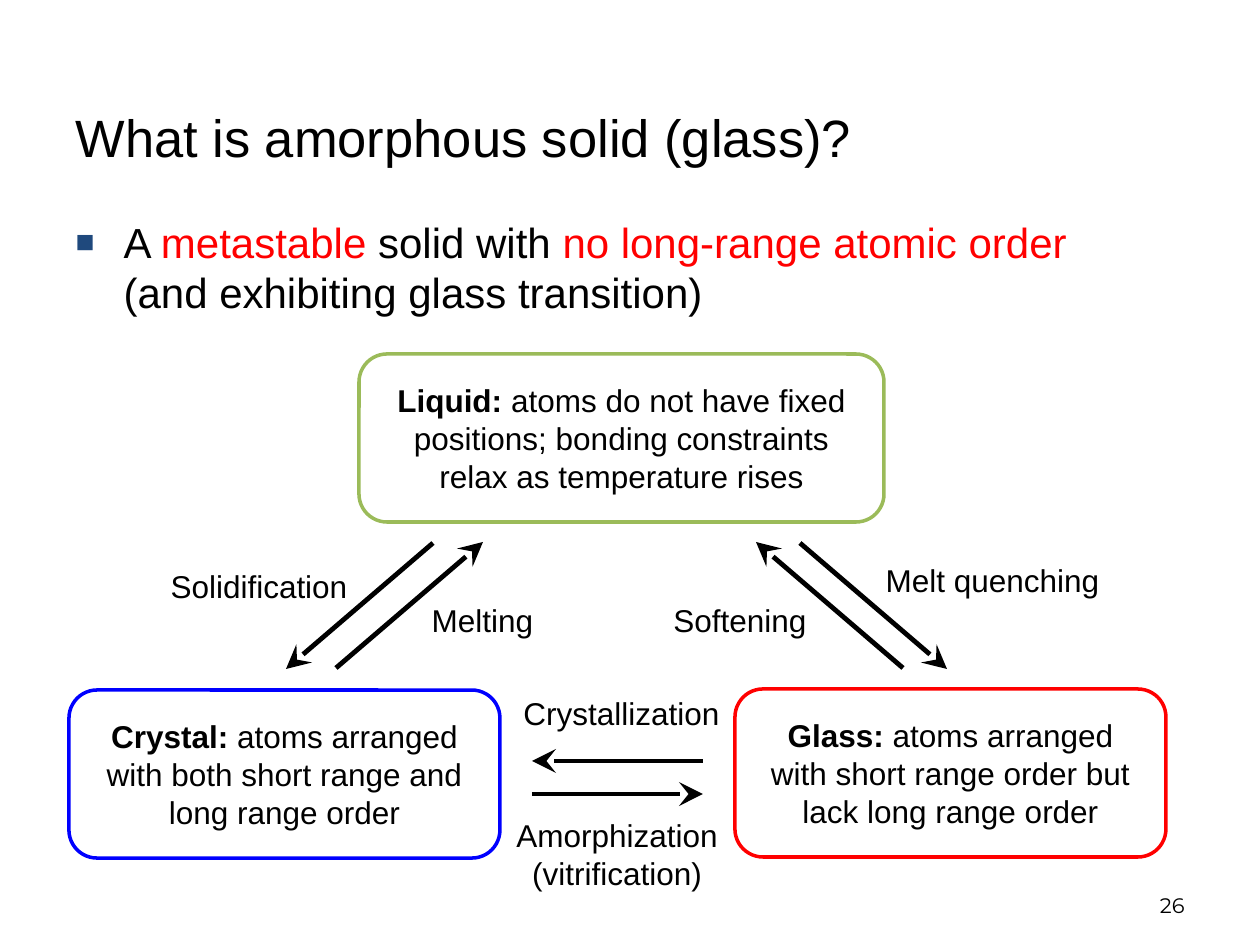
"""Build a slide on the transitions between liquid, crystal and glass."""
import pptx
import pptx.util
import pptx.dml.color
import pptx.enum.shapes
import pptx.enum.text
import pptx.oxml.ns
from lxml import etree

RGBColor = pptx.dml.color.RGBColor
BLACK = RGBColor(0, 0, 0)
RED = RGBColor(255, 0, 0)
BLUE = RGBColor(0, 0, 255)
GREEN = RGBColor(0x9B, 0xBB, 0x59)
NAVY = "1F497D"
SCALE = 914400 / 126
ALIGN = pptx.enum.text.PP_ALIGN
ANCHOR = pptx.enum.text.MSO_ANCHOR
AUTO_SIZE = pptx.enum.text.MSO_AUTO_SIZE
qn = pptx.oxml.ns.qn


def px(*lengths):
    return [pptx.util.Emu(round(length * SCALE)) for length in lengths]


def add_run(paragraph, text, size, color=BLACK, bold=False, font="Arial"):
    run = paragraph.add_run()
    run.text = text
    run.font.name = font
    run.font.size = pptx.util.Pt(size)
    run.font.color.rgb = color
    run.font.bold = bold


deck = pptx.Presentation()
deck.slide_width, deck.slide_height = px(1260, 945)
slide = deck.slides.add_slide(deck.slide_layouts[1])
shapes = slide.shapes

question = shapes.title
question.left, question.top, question.width, question.height = px(63, 63, 1134, 147)
question.text_frame.vertical_anchor = ANCHOR.MIDDLE
question.text_frame.auto_size = AUTO_SIZE.NONE
heading = question.text_frame.paragraphs[0]
heading.alignment = ALIGN.LEFT
add_run(heading, "What is amorphous solid (glass)?", 30)

definition = slide.placeholders[1]
definition.left, definition.top, definition.width, definition.height = px(63, 210, 1103, 588)
definition.text_frame.auto_size = AUTO_SIZE.NONE
sentence = definition.text_frame.paragraphs[0]
bullet = sentence._p.get_or_add_pPr()
indent = px(48)[0]
bullet.set("marL", str(indent))
bullet.set("indent", str(-indent))
bullet_color = etree.SubElement(bullet, qn("a:buClr"))
etree.SubElement(bullet_color, qn("a:srgbClr"), val=NAVY)
etree.SubElement(bullet, qn("a:buSzPct"), val="75000")
etree.SubElement(bullet, qn("a:buFont"), typeface="Arial")
etree.SubElement(bullet, qn("a:buChar"), char="■")
sentence.space_before = pptx.util.Pt(0)
for words, color in [
    ("A ", BLACK),
    ("metastable", RED),
    (" solid with ", BLACK),
    ("no long-range atomic order ", RED),
    ("(and exhibiting glass transition)", BLACK),
]:
    add_run(sentence, words, 24, color)

for state, meaning, color, left, top, width in [
    ("Liquid:", " atoms do not have fixed positions; bonding constraints relax as temperature rises",
     GREEN, 359, 354, 525),
    ("Crystal:", " atoms arranged with both short range and long range order", BLUE, 69, 690, 431),
    ("Glass:", " atoms arranged with short range order but lack long range order", RED, 735, 689, 431),
]:
    phase = shapes.add_shape(pptx.enum.shapes.MSO_SHAPE.ROUNDED_RECTANGLE, *px(left, top, width, 168))
    phase.shadow.inherit = False
    phase.fill.background()
    phase.line.color.rgb = color
    phase.line.width = pptx.util.Pt(2)
    frame = phase.text_frame
    frame.word_wrap = True
    frame.vertical_anchor = ANCHOR.MIDDLE
    frame.margin_left, frame.margin_right, frame.margin_top, frame.margin_bottom = px(25, 25, 13, 13)
    paragraph = frame.paragraphs[0]
    paragraph.alignment = ALIGN.CENTER
    add_run(paragraph, state, 18, bold=True)
    add_run(paragraph, meaning, 18)

for ends in [
    (433, 543, 286, 669),
    (336, 668, 483, 542),
    (800, 543, 947, 669),
    (903, 668, 756, 542),
    (703, 761, 532, 761),
    (532, 794, 703, 794),
]:
    transition = shapes.add_connector(pptx.enum.shapes.MSO_CONNECTOR.STRAIGHT, *px(*ends))
    transition.line.color.rgb = BLACK
    transition.line.width = pptx.util.Pt(2.75)
    etree.SubElement(transition.line._get_or_add_ln(), qn("a:tailEnd"), type="stealth", w="lg", len="lg")
    etree.SubElement(transition._element.spPr, qn("a:effectLst"))

for process, left, top, width, height, wraps in [
    ("Solidification", 157, 561, 204, 50, False),
    ("Melting", 418, 595, 129, 50, False),
    ("Melt quenching", 872, 555, 241, 50, False),
    ("Softening", 660, 595, 160, 50, False),
    ("Crystallization", 510, 688, 223, 50, False),
    ("Amorphization (vitrification)", 495, 810, 244, 89, True),
]:
    label = shapes.add_textbox(*px(left, top, width, height))
    label.text_frame.word_wrap = wraps
    label.text_frame.auto_size = AUTO_SIZE.SHAPE_TO_FIT_TEXT
    paragraph = label.text_frame.paragraphs[0]
    paragraph.alignment = ALIGN.CENTER
    add_run(paragraph, process, 18)

page = shapes.add_textbox(*px(903, 861, 294, 63))
page.text_frame.word_wrap = True
page.text_frame.vertical_anchor = ANCHOR.BOTTOM
number = page.text_frame.paragraphs[0]
number.alignment = ALIGN.RIGHT
add_run(number, "26", 12, font="Montserrat")

deck.save("out.pptx")
